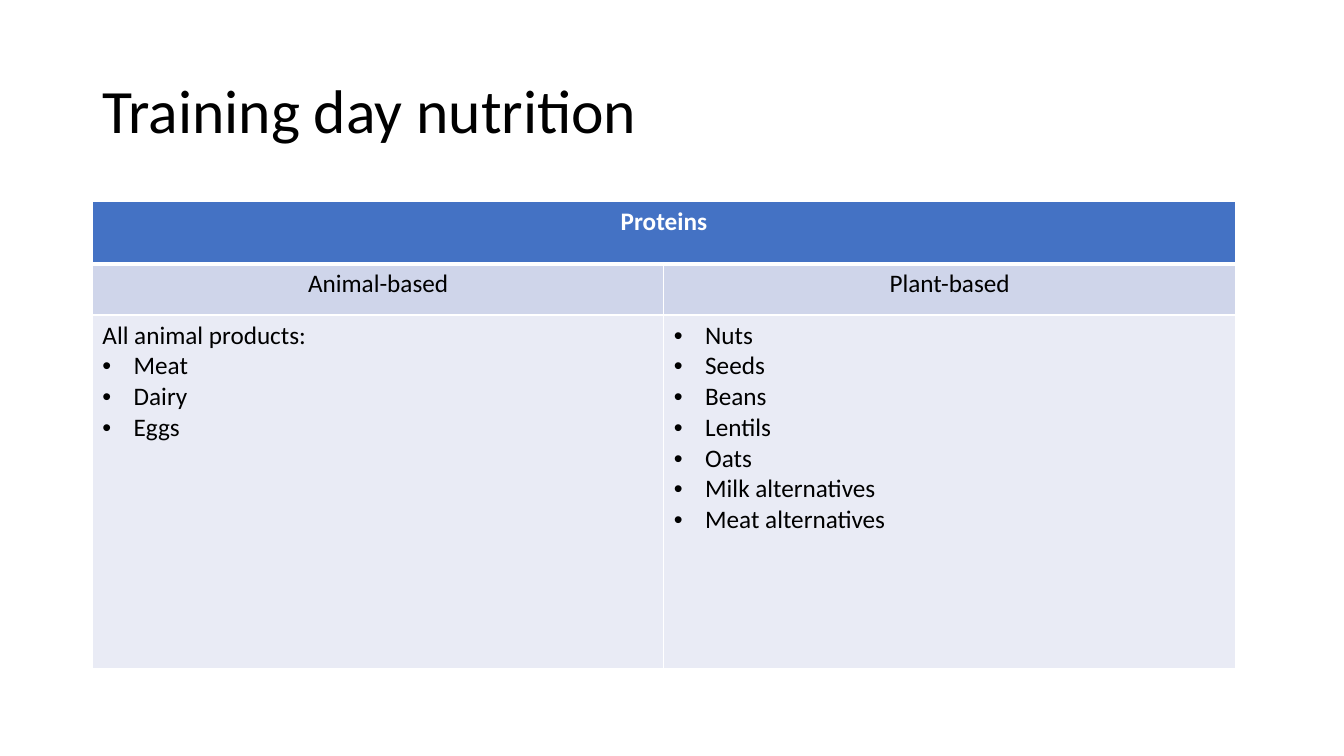
import dataclasses

import lxml.etree
import pptx
import pptx.dml.color
import pptx.enum.text
import pptx.oxml.ns
import pptx.presentation
import pptx.slide
import pptx.table
import pptx.text.text
import pptx.util

GRID_COLUMNS = 160
GRID_ROWS = 90
UNIT = pptx.util.Inches(1 / 12)


@dataclasses.dataclass(frozen=True)
class Theme:
    font: str = "Calibri"
    title_size: float = 44
    body_size: float = 18
    ink: str = "000000"
    paper: str = "FFFFFF"
    heading_fill: str = "4472C4"
    group_fill: str = "CFD5EA"
    foods_fill: str = "E9EBF5"
    rule_width: float = 1
    heading_rule_width: float = 3


@dataclasses.dataclass(frozen=True)
class Area:
    column: float
    row: float
    columns: float
    rows: float

    def box(self) -> tuple[int, int, int, int]:
        return (units(self.column), units(self.row),
                units(self.columns), units(self.rows))


@dataclasses.dataclass(frozen=True)
class Line:
    text: str
    bulleted: bool = False


@dataclasses.dataclass(frozen=True)
class Band:
    rows: float
    fill: str
    ink: str
    cells: tuple[tuple[Line, ...], ...]
    bold: bool = False
    centred: bool = True
    bottom_rule: float = 1


THEME = Theme()
TITLE_AREA = Area(11, 4.8, 138, 17.4)
TABLE_AREA = Area(11, 24, 136.08, 55.6)
BULLET_INDENT = pptx.util.Inches(0.31)


def units(count: float) -> int:
    return round(count * UNIT)


def bullets(*foods: str) -> tuple[Line, ...]:
    return tuple(Line(food, True) for food in foods)


BANDS = (
    Band(7.4, THEME.heading_fill, THEME.paper, ((Line("Proteins"),),),
         bold=True, bottom_rule=THEME.heading_rule_width),
    Band(6.1, THEME.group_fill, THEME.ink,
         ((Line("Animal-based"),), (Line("Plant-based"),))),
    Band(42.1, THEME.foods_fill, THEME.ink,
         ((Line("All animal products:"), *bullets("Meat", "Dairy", "Eggs")),
          bullets("Nuts", "Seeds", "Beans", "Lentils", "Oats",
                  "Milk alternatives", "Meat alternatives")),
         centred=False),
)


def add_child(parent: lxml.etree._Element, tag: str,
              **attributes: str) -> lxml.etree._Element:
    return lxml.etree.SubElement(parent, pptx.oxml.ns.qn(tag), attributes)


def style_font(paragraph: pptx.text.text._Paragraph, size: float,
               ink: str, bold: bool = False) -> None:
    font = paragraph.font
    font.name = THEME.font
    font.size = pptx.util.Pt(size)
    font.bold = bold
    font.color.rgb = pptx.dml.color.RGBColor.from_string(ink)


def add_bullet(paragraph: pptx.text.text._Paragraph) -> None:
    properties = paragraph._p.get_or_add_pPr()
    properties.set("marL", str(BULLET_INDENT))
    properties.set("indent", str(-BULLET_INDENT))
    add_child(properties, "a:buFont", typeface="Arial")
    add_child(properties, "a:buChar", char="•")


def rule_cell(cell: pptx.table._Cell, top: float, bottom: float) -> None:
    properties = cell._tc.get_or_add_tcPr()
    widths = {"a:lnL": THEME.rule_width, "a:lnR": THEME.rule_width,
              "a:lnT": top, "a:lnB": bottom}
    for side, width in widths.items():
        rule = add_child(properties, side, w=str(pptx.util.Pt(width)))
        add_child(add_child(rule, "a:solidFill"), "a:srgbClr", val=THEME.paper)


def fill_cell(cell: pptx.table._Cell, band: Band,
              lines: tuple[Line, ...]) -> None:
    frame = cell.text_frame
    for index, line in enumerate(lines):
        paragraph = frame.add_paragraph() if index else frame.paragraphs[0]
        paragraph.text = line.text
        if band.centred:
            paragraph.alignment = pptx.enum.text.PP_ALIGN.CENTER
        if line.bulleted:
            add_bullet(paragraph)
        style_font(paragraph, THEME.body_size, band.ink, band.bold)


def draw_title(slide: pptx.slide.Slide, text: str) -> None:
    frame = slide.shapes.add_textbox(*TITLE_AREA.box()).text_frame
    frame.word_wrap = True
    frame.vertical_anchor = pptx.enum.text.MSO_ANCHOR.MIDDLE
    title = frame.paragraphs[0]
    title.text = text
    title.line_spacing = 0.9
    style_font(title, THEME.title_size, THEME.ink)


def draw_proteins(slide: pptx.slide.Slide, bands: tuple[Band, ...]) -> None:
    column_count = max(len(band.cells) for band in bands)
    proteins = slide.shapes.add_table(
        len(bands), column_count, *TABLE_AREA.box()).table
    for column in proteins.columns:
        column.width = units(TABLE_AREA.columns / column_count)
    top_rule = THEME.rule_width
    for row, band in enumerate(bands):
        proteins.rows[row].height = units(band.rows)
        for column in range(column_count):
            cell = proteins.cell(row, column)
            rule_cell(cell, top_rule, band.bottom_rule)
            cell.fill.solid()
            cell.fill.fore_color.rgb = (
                pptx.dml.color.RGBColor.from_string(band.fill))
        if len(band.cells) == 1:
            proteins.cell(row, 0).merge(proteins.cell(row, column_count - 1))
        for column, lines in enumerate(band.cells):
            fill_cell(proteins.cell(row, column), band, lines)
        top_rule = band.bottom_rule


def main() -> None:
    deck = pptx.Presentation()
    deck.slide_width = units(GRID_COLUMNS)
    deck.slide_height = units(GRID_ROWS)
    slide = deck.slides.add_slide(deck.slide_layouts[6])
    draw_title(slide, "Training day nutrition")
    draw_proteins(slide, BANDS)
    deck.save("out.pptx")


if __name__ == "__main__":
    main()
